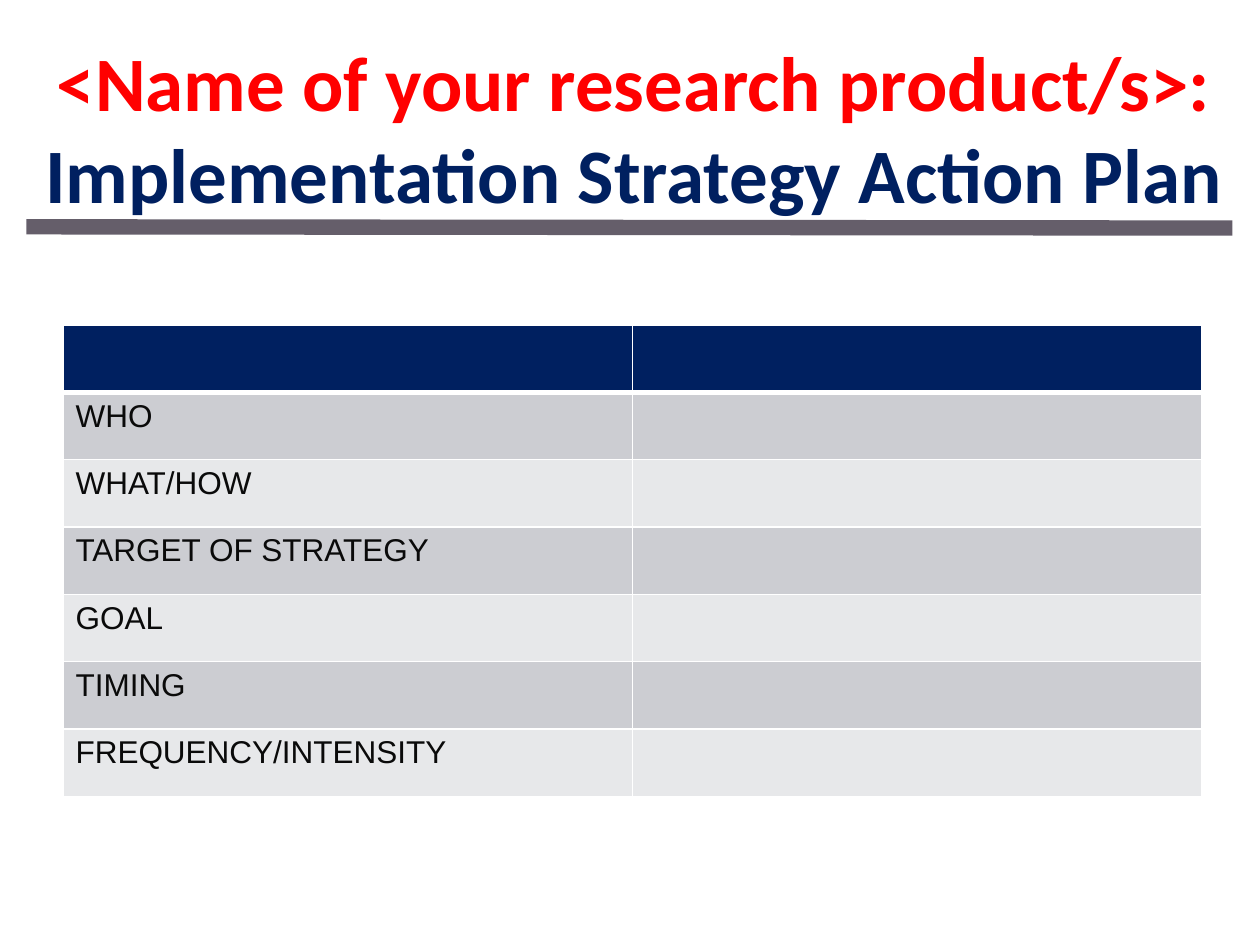
from lxml.etree import SubElement
from pptx import Presentation
from pptx.dml.color import RGBColor as Color
from pptx.enum.shapes import MSO_CONNECTOR as Connector
from pptx.enum.text import MSO_ANCHOR as Anchor, MSO_AUTO_SIZE as AutoSize, PP_ALIGN as Align
from pptx.oxml.ns import qn
from pptx.util import Inches, Pt

COLORS = {
    "red": "FF0000",
    "navy": "002060",
    "rule": "655E6A",
    "dark_band": "CCCDD2",
    "light_band": "E7E8EA",
    "ink": "0A0A0A",
    "white": "FFFFFF",
}
ROW_LABELS = ["", "WHO", "WHAT/HOW", "TARGET OF STRATEGY", "GOAL", "TIMING", "FREQUENCY/INTENSITY"]


def color(name):
    return Color.from_string(COLORS[name])


def place(shape, left, top, width, height):
    shape.left, shape.top = Inches(left), Inches(top)
    shape.width, shape.height = Inches(width), Inches(height)


def add_title(page, box):
    title = page.shapes.title
    place(title, *box)
    frame = title.text_frame
    frame.word_wrap = True
    frame.auto_size = AutoSize.SHAPE_TO_FIT_TEXT
    frame.vertical_anchor = Anchor.TOP
    para = frame.paragraphs[0]
    para.alignment = Align.CENTER
    for text, name in (
        ("<Name of your research product/s>: ", "red"),
        ("Implementation Strategy Action Plan", "navy"),
    ):
        span = para.add_run()
        span.text = text
        span.font.name = "Calibri"
        span.font.size = Pt(44)
        span.font.bold = True
        span.font.color.rgb = color(name)


def add_rule(page, start, end):
    points = [Inches(value) for value in (*start, *end)]
    rule = page.shapes.add_connector(Connector.STRAIGHT, *points)
    rule.line.color.rgb = color("rule")
    rule.line.width = Pt(8.75)
    SubElement(rule._element.spPr, qn("a:effectLst"))


def set_borders(cell, top, bottom):
    properties = cell._tc.get_or_add_tcPr()
    for side, width in (("L", 1), ("R", 1), ("T", top), ("B", bottom)):
        line = SubElement(properties, qn(f"a:ln{side}"), w=str(Pt(width)))
        fill = SubElement(line, qn("a:solidFill"))
        SubElement(fill, qn("a:srgbClr"), val=COLORS["white"])


def add_plan_table(page, box):
    lengths = [Inches(value) for value in box]
    table = page.shapes.add_table(len(ROW_LABELS), 2, *lengths).table
    for index, label in enumerate(ROW_LABELS):
        if index == 0:
            band = "navy"
        else:
            band = "dark_band" if index % 2 else "light_band"
        for cell in table.rows[index].cells:
            # The header is set off by a thicker line
            set_borders(cell, 3 if index == 1 else 1, 3 if index == 0 else 1)
            cell.fill.solid()
            cell.fill.fore_color.rgb = color(band)
        if label:
            para = table.cell(index, 0).text_frame.paragraphs[0]
            para.text = label
            font = para.runs[0].font
            font.name = "Arial"
            font.size = Pt(18)
            font.color.rgb = color("ink")


def main():
    deck = Presentation()
    deck.slide_width, deck.slide_height = Inches(10), Inches(7.5)
    page = deck.slides.add_slide(deck.slide_layouts[5])

    # Heading and the rule below it
    add_rule(page, (9.78, 1.81), (0.21, 1.8))
    add_title(page, (0.1, 0.22, 9.87, 1.58))

    # Action plan
    add_plan_table(page, (0.5, 2.58, 9.04, 3.74))

    deck.save("out.pptx")


if __name__ == "__main__":
    main()
